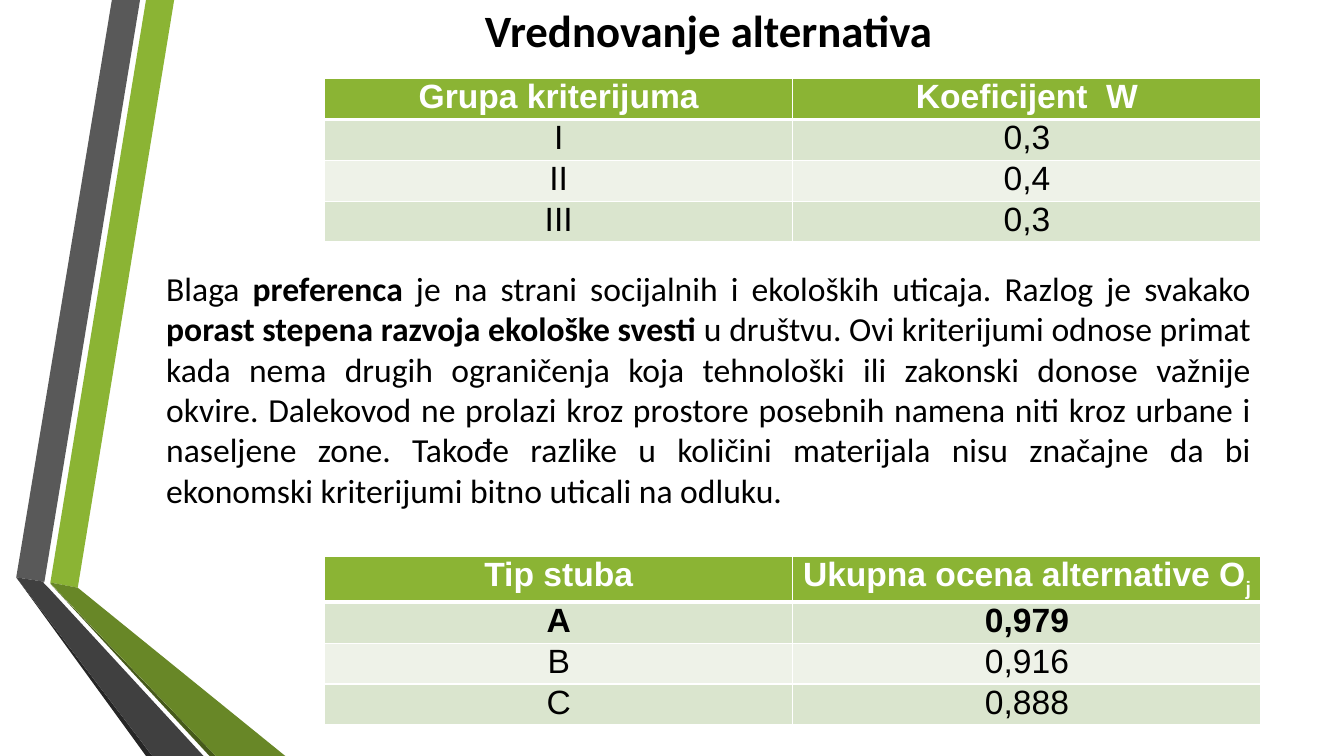
from lxml import etree
from pptx import Presentation
from pptx import util as u
from pptx.dml.color import RGBColor
from pptx.enum import text
from pptx.oxml import ns

Cm, Pt = u.Cm, u.Pt
HUES = {
    "green": "8BB434", "moss": "688727", "olive": "465A1A",
    "gray": "595959", "dark": "404040", "coal": "262626",
    "band": "DAE5CE", "pale": "EEF2E8",
    "white": "FFFFFF", "black": "000000",
}


def add_run(para, words, size, face, hue, bold=False):
    run = para.add_run()
    run.text = words
    font = run.font
    font.size, font.name, font.bold = Pt(size), face, bold
    font.color.rgb = RGBColor.from_string(HUES[hue])
    return run


def add_edge(cell, side, width):
    props = cell._tc.get_or_add_tcPr()
    line = etree.SubElement(props, ns.qn("a:ln" + side), w=str(Pt(width)))
    fill = etree.SubElement(line, ns.qn("a:solidFill"))
    etree.SubElement(fill, ns.qn("a:srgbClr"), val=HUES["white"])


deck = Presentation()
deck.slide_width, deck.slide_height = Cm(33.87), Cm(19.05)
slide = deck.slides.add_slide(deck.slide_layouts[6])

# Ribbons on the left, points in hundredths of a centimetre
ribbons = [
    ("green", [(127, 1468), (196, 1481), (439, 0), (368, 0)]),
    ("gray", [(353, 0), (282, 0), (41, 1455), (112, 1466)]),
    ("coal", [(41, 1455), (368, 1905), (384, 1905)]),
    ("olive", [(127, 1471), (528, 1905), (544, 1905)]),
    ("moss", [(127, 1470), (544, 1905), (719, 1905), (196, 1481), (127, 1468)]),
    ("dark", [(513, 1905), (122, 1481), (109, 1468), (112, 1466),
              (41, 1455), (384, 1905)]),
]
for hue, points in ribbons:
    pen = slide.shapes.build_freeform(*points[0], scale=Cm(0.01))
    pen.add_line_segments(points[1:], close=True)
    ribbon = pen.convert_to_shape()
    ribbon.shadow.inherit = False
    ribbon.fill.solid()
    ribbon.fill.fore_color.rgb = RGBColor.from_string(HUES[hue])
    ribbon.line.fill.background()

# Title and body text
title = [("Vrednovanje alternativa", True)]
body = [
    ("Blaga ", False),
    ("preferenca", True),
    (" je na strani socijalnih i ekoloških uticaja. Razlog je svakako ", False),
    ("porast stepena razvoja ekološke svesti ", True),
    ("u društvu. Ovi kriterijumi odnose primat kada nema drugih ograničenja "
     "koja tehnološki ili zakonski donose važnije okvire. Dalekovod ne prolazi "
     "kroz prostore posebnih namena niti kroz urbane i naseljene zone. Takođe "
     "razlike u količini materijala nisu značajne da bi ekonomski kriterijumi "
     "bitno uticali na odluku.", False),
]
middle, top = text.MSO_ANCHOR.MIDDLE, text.MSO_ANCHOR.TOP
center, justify = text.PP_ALIGN.CENTER, text.PP_ALIGN.JUSTIFY
for y, height, size, anchor, align, runs in [
    (0, 1.5, 32, middle, center, title),
    (6.63, 6.4, 24, top, justify, body),
]:
    box = slide.shapes.add_textbox(Cm(3.94), Cm(y), Cm(27.84), Cm(height))
    frame = box.text_frame
    frame.word_wrap = True
    frame.vertical_anchor = anchor
    para = frame.paragraphs[0]
    para.alignment = align
    for words, bold in runs:
        add_run(para, words, size, "Calibri", "black", bold)

# Tables: top edge, bold rows, subscript after the last heading, rows
tables = [
    (1.98, {0}, "", [("Grupa kriterijuma", "Koeficijent  W"),
                     ("I", "0,3"), ("II", "0,4"), ("III", "0,3")]),
    (14.02, {0, 1}, "j", [("Tip stuba", "Ukupna ocena alternative O"),
                          ("A", "0,979"), ("B", "0,916"), ("C", "0,888")]),
]
for y, strong, sub, rows in tables:
    grid = slide.shapes.add_table(
        len(rows), 2, Cm(8.18), Cm(y), Cm(23.6), Cm(1.03 * len(rows))).table
    for r, row in enumerate(rows):
        hue = "green" if r == 0 else "band" if r % 2 else "pale"
        ink = "black" if r else "white"
        for c, words in enumerate(row):
            cell = grid.cell(r, c)
            cell.margin_left = cell.margin_right = Cm(0.18)
            cell.margin_top = cell.margin_bottom = 0
            for side, width in [("L", 1), ("R", 1), ("T", 3 if r == 1 else 1),
                                ("B", 3 if r == 0 else 1)]:
                add_edge(cell, side, width)
            cell.fill.solid()
            cell.fill.fore_color.rgb = RGBColor.from_string(HUES[hue])
            para = cell.text_frame.paragraphs[0]
            para.alignment = center
            add_run(para, words, 24, "Arial", ink, r in strong)
            if sub and (r, c) == (0, 1):
                low = add_run(para, sub, 24, "Arial", ink, True)
                low.font._element.set("baseline", "-25000")

deck.save("out.pptx")
